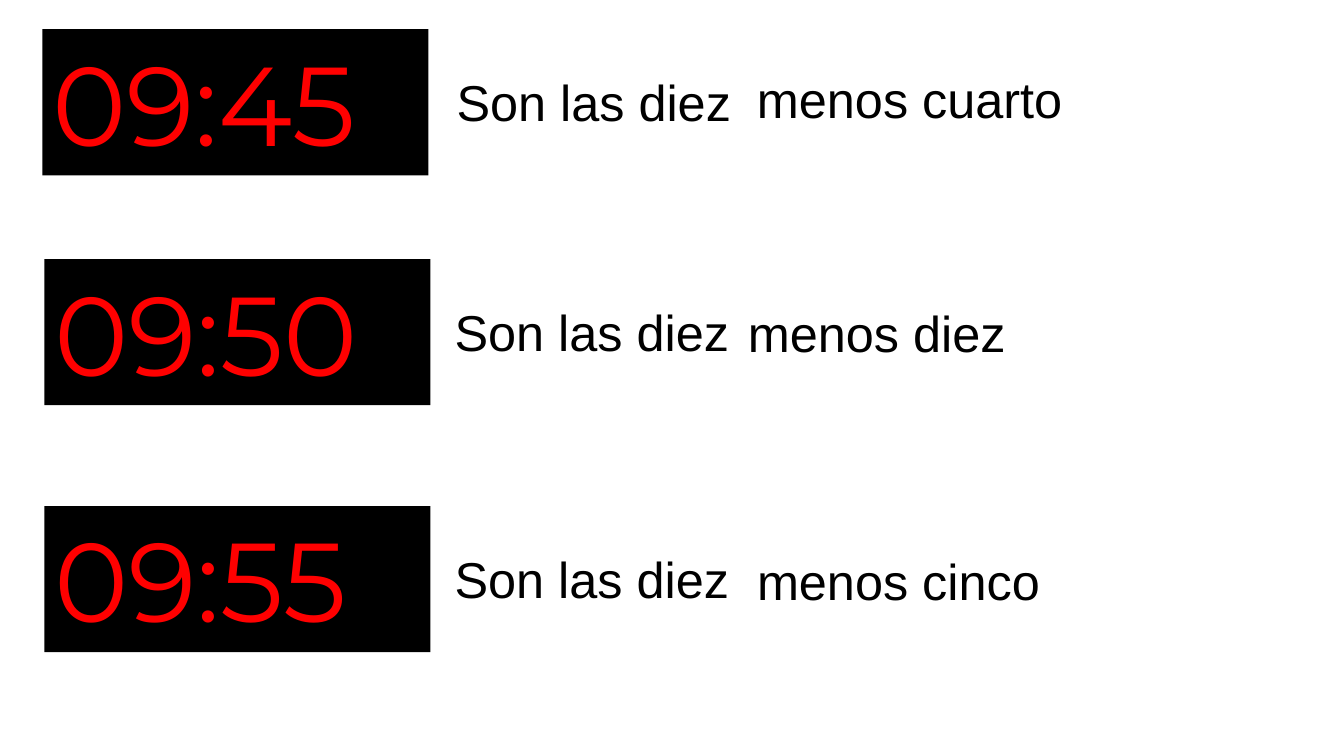
from pptx import Presentation
from pptx.dml.color import RGBColor
from pptx.enum.text import MSO_AUTO_SIZE
from pptx.util import Inches, Pt

AUTO_GROW = MSO_AUTO_SIZE.SHAPE_TO_FIT_TEXT
BLACK = "000000"
RED = "FF0000"
HOUR_PHRASE = "Son las diez"
CLOCK_ROWS = [
    ("09:45", (0.42, 0.29), (4.43, 0.66, 5.56), "menos cuarto", (7.41, 0.63, 3.73)),
    ("09:50", (0.44, 2.57), (4.41, 2.94, 7.49), "menos diez", (7.32, 2.95, 4.74)),
    ("09:55", (0.44, 5.02), (4.41, 5.39, 7.49), "menos cinco", (7.41, 5.41, 3.31)),
]


def rgb(color):
    return RGBColor.from_string(color)


def add_text(slide, text, left, top, width, height, font, size, color):
    box = slide.shapes.add_textbox(
        Inches(left), Inches(top), Inches(width), Inches(height)
    )
    frame = box.text_frame
    frame.word_wrap = True
    frame.auto_size = AUTO_GROW
    run = frame.paragraphs[0].add_run()
    run.text = text
    run.font.name = font
    run.font.size = Pt(size)
    run.font.color.rgb = rgb(color)
    return box


def add_clock(slide, time, left, top):
    clock = add_text(slide, time, left, top, 3.83, 1.45, "Montserrat", 80, RED)
    clock.fill.solid()
    clock.fill.fore_color.rgb = rgb(BLACK)


def add_phrase(slide, phrase, left, top, width):
    add_text(slide, phrase, left, top, width, 0.71, "Arial", 36, BLACK)


def main():
    prs = Presentation()
    prs.slide_width = Inches(13.33)
    prs.slide_height = Inches(7.5)
    slide = prs.slides.add_slide(prs.slide_layouts[6])
    for time, clock_place, hour_place, minutes_phrase, minutes_place in CLOCK_ROWS:
        add_clock(slide, time, *clock_place)
        add_phrase(slide, HOUR_PHRASE, *hour_place)
        add_phrase(slide, minutes_phrase, *minutes_place)
    prs.save("out.pptx")


if __name__ == "__main__":
    main()
